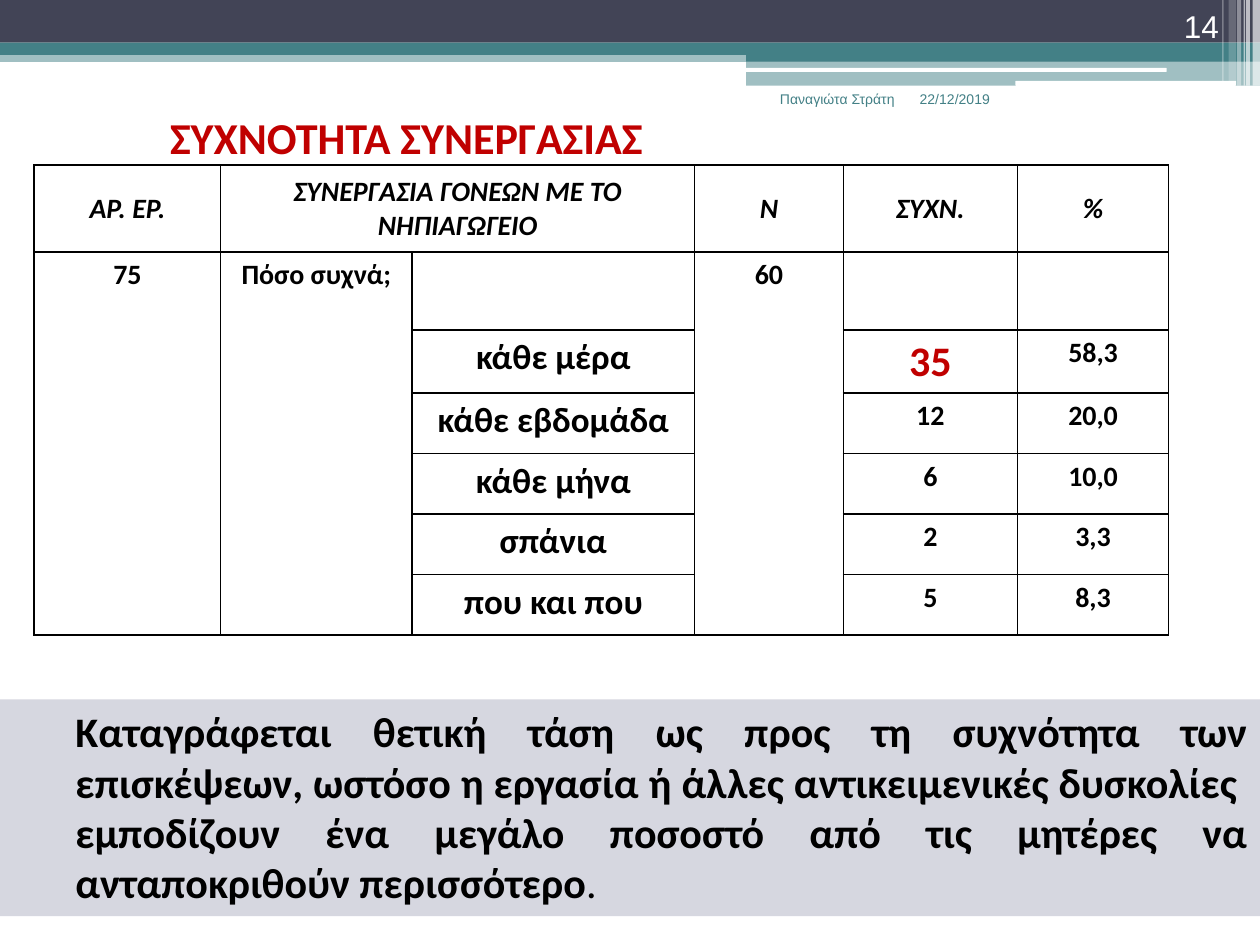
import pptx
import pptx.util
import pptx.dml.color
import pptx.enum.shapes
import pptx.enum.text
import pptx.oxml
import pptx.oxml.ns

Cm = pptx.util.Cm
Pt = pptx.util.Pt
Kind = pptx.enum.shapes.MSO_SHAPE
Align = pptx.enum.text.PP_ALIGN
Anchor = pptx.enum.text.MSO_ANCHOR
NS = pptx.oxml.ns.nsdecls("a")

HEAD = ["ΑΡ. ΕΡ.", "ΣΥΝΕΡΓΑΣΙΑ ΓΟΝΕΩΝ ΜΕ ΤΟ ΝΗΠΙΑΓΩΓΕΙΟ", "", "Ν", "ΣΥΧΝ.", "%"]
ROWS = [
    ["75", "Πόσο συχνά;", "", "60", "", ""],
    ["", "", "κάθε μέρα", "", "35", "58,3"],
    ["", "", "κάθε εβδομάδα", "", "12", "20,0"],
    ["", "", "κάθε μήνα", "", "6", "10,0"],
    ["", "", "σπάνια", "", "2", "3,3"],
    ["", "", "που και που", "", "5", "8,3"],
]
NOTE = (
    "Καταγράφεται θετική τάση ως προς τη συχνότητα των επισκέψεων, "
    "ωστόσο η εργασία ή άλλες αντικειμενικές δυσκολίες  εμποδίζουν ένα "
    "μεγάλο ποσοστό από τις μητέρες να ανταποκριθούν περισσότερο"
)


def color(code):
    """Turn a hex string into a colour."""
    return pptx.dml.color.RGBColor.from_string(code)


def add_run(para, text, size, code, face="Calibri", bold=True, slant=False):
    """Add one styled run to a paragraph."""
    run = para.add_run()
    run.text = text
    font = run.font
    font.size, font.name, font.bold, font.italic = Pt(size), face, bold, slant
    font.color.rgb = color(code)


def add_bar(slide, box, code, alpha=100, kind=Kind.RECTANGLE):
    """Draw a plain filled bar, with opacity in percent."""
    bar = slide.shapes.add_shape(kind, *map(Cm, box))
    bar.shadow.inherit = False
    bar.line.fill.background()
    bar.fill.solid()
    bar.fill.fore_color.rgb = color(code)
    if alpha < 100:
        tint = bar.fill._xPr.find(".//" + pptx.oxml.ns.qn("a:srgbClr"))
        tint.append(pptx.oxml.parse_xml(f'<a:alpha {NS} val="{alpha * 1000}"/>'))
    return bar


def add_label(slide, box, text, size, code, align, anchor=Anchor.TOP, **style):
    """Place a one-line text box."""
    frame = slide.shapes.add_textbox(*map(Cm, box)).text_frame
    frame.word_wrap = True
    frame.vertical_anchor = anchor
    para = frame.paragraphs[0]
    para.alignment = align
    add_run(para, text, size, code, **style)


def add_band(slide, left, top, width):
    """Draw the bars and stripes across the top."""
    tab = left + 15.04
    rest = width - 15.04
    add_bar(slide, (left, top + 1.02, width, 0.23), "438086", 50)
    add_bar(slide, (left, top, width, 0.86), "424456")
    add_bar(slide, (left, top + 0.86, width, 0.25), "438086")
    add_bar(slide, (tab, top + 0.99, rest, 0.25), "438086")
    add_bar(slide, (tab, top + 1.22, rest, 0.51), "438086", 50)
    for x, y, wide, high in [(15.01, 1.37, 8.51, 0.08), (20.47, 1.63, 4.45, 0.1)]:
        box = (left + x, top + y, wide, high)
        add_bar(slide, box, "FFFFFF", kind=Kind.ROUNDED_RECTANGLE)
    for x, wide, high, alpha in [
        (25.25, 0.15, 1.73, 65),
        (25.12, 0.08, 1.73, 65),
        (25.07, 0.03, 1.73, 60),
        (24.94, 0.08, 1.73, 40),
        (24.77, 0.15, 1.63, 20),
        (24.64, 0.03, 1.63, 30),
    ]:
        add_bar(slide, (left + x, top, wide, high), "FFFFFF", alpha)


def add_border(cell):
    """Give a cell thin black lines on all sides and no fill."""
    cell.fill.background()
    props = cell._tc.get_or_add_tcPr()
    for spot, side in enumerate("LRTB"):
        props.insert(spot, pptx.oxml.parse_xml(
            f'<a:ln{side} {NS} w="12700"><a:solidFill>'
            f'<a:srgbClr val="000000"/></a:solidFill></a:ln{side}>'))


def add_grid(slide, left, top):
    """Build the table of answers."""
    cols = [3.76, 3.86, 5.69, 3, 3.51, 3.05]
    highs = [1.75, 1.57] + [1.22] * 5
    box = (left, top, sum(cols), sum(highs))
    table = slide.shapes.add_table(len(highs), len(cols), *map(Cm, box)).table
    table.first_row = table.horz_banding = False
    for col, wide in zip(table.columns, cols):
        col.width = Cm(wide)
    for row, high in zip(table.rows, highs):
        row.height = Cm(high)
    for r, texts in enumerate([HEAD] + ROWS):
        for c, text in enumerate(texts):
            cell = table.cell(r, c)
            add_border(cell)
            cell.vertical_anchor = Anchor.TOP if r else Anchor.MIDDLE
            if text:
                para = cell.text_frame.paragraphs[0]
                para.alignment = Align.CENTER
                top_hit = text == "35"
                size = 24 if top_hit else 20 if c == 2 else 16
                code = "C00000" if top_hit else "000000"
                add_run(para, text, size, code, slant=r == 0)
    table.cell(0, 1).merge(table.cell(0, 2))
    for c in (0, 1, 3):
        table.cell(1, c).merge(table.cell(len(ROWS), c))


def add_note(slide, box):
    """Write the conclusion on its tinted panel."""
    frame = add_bar(slide, box, "D6D7E0").text_frame
    frame.word_wrap = True
    frame.vertical_anchor = Anchor.TOP
    para = frame.paragraphs[0]
    para.alignment = Align.JUSTIFY
    props = para._p.get_or_add_pPr()
    props.set("marL", str(Cm(1.27)))
    props.set("indent", "0")
    add_run(para, NOTE, 24, "000000")
    add_run(para, ".", 24, "000000", bold=False)


def main():
    """Build the slide and save it."""
    deck = pptx.Presentation()
    deck.slide_width, deck.slide_height = Cm(25.4), Cm(19.05)
    slide = deck.slides.add_slide(deck.slide_layouts[6])
    add_band(slide, 0, 0, 25.4)
    add_label(slide, (1.3, 2.39, 13.79, 0.74), "ΣΥΧΝΟΤΗΤΑ ΣΥΝΕΡΓΑΣΙΑΣ",
              25.2, "C00000", Align.CENTER, Anchor.MIDDLE)
    add_grid(slide, 0.69, 3.33)
    plain = {"face": "Arial", "bold": False}
    add_label(slide, (18.29, 1.7, 2.67, 1.27), "22/12/2019",
              8, "438086", Align.LEFT, **plain)
    add_label(slide, (14.61, 1.7, 3.68, 1.27), "Παναγιώτα Στράτη",
              8, "438086", Align.RIGHT, **plain)
    add_label(slide, (22.71, 0, 2.11, 1.02), "14",
              18, "FFFFFF", Align.RIGHT, Anchor.BOTTOM, **plain)
    add_note(slide, (0, 14.1, 25.4, 4.37))
    deck.save("out.pptx")


if __name__ == "__main__":
    main()
